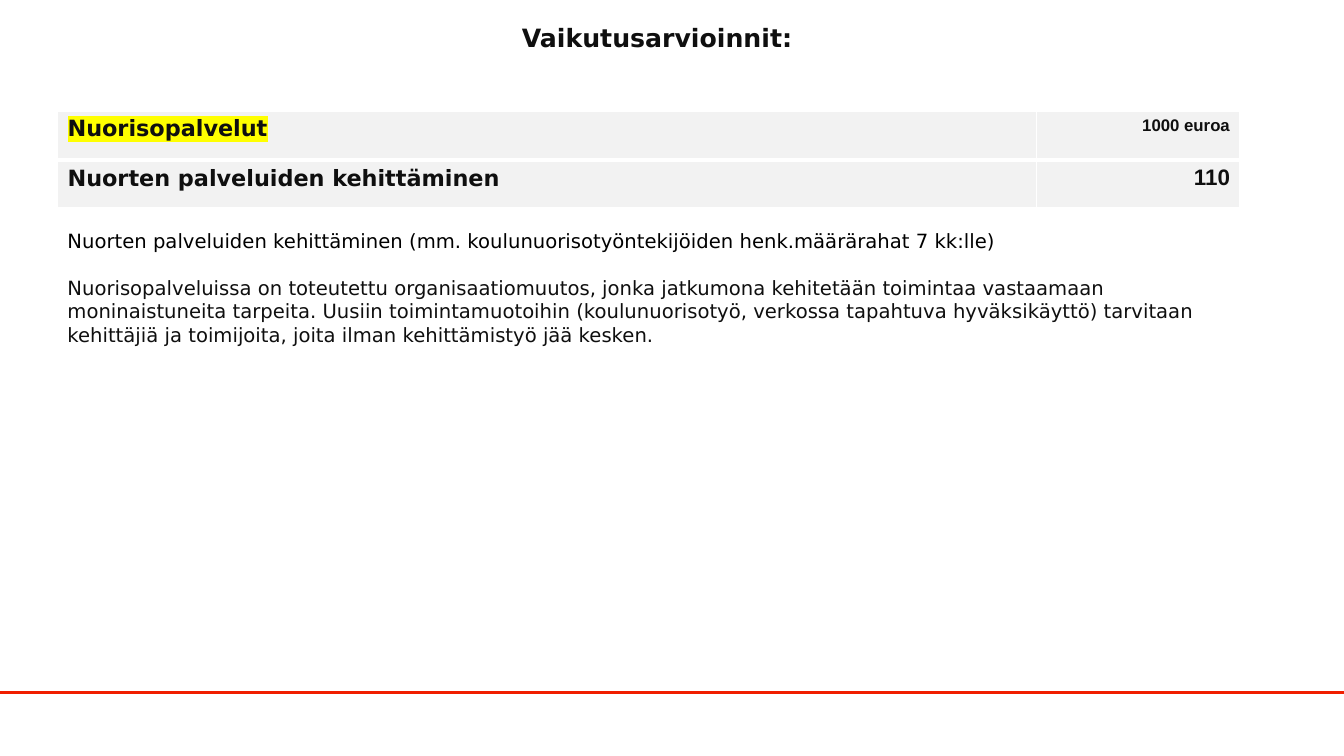
from dataclasses import dataclass
from lxml.etree import SubElement
from pptx import Presentation
from pptx.dml.color import RGBColor
from pptx.enum.shapes import MSO_CONNECTOR
from pptx.enum.text import MSO_ANCHOR, MSO_AUTO_SIZE, PP_ALIGN
from pptx.oxml import parse_xml
from pptx.oxml.ns import nsdecls, qn
from pptx.util import Cm, Pt

TITLE = "Vaikutusarvioinnit:"
ROWS = [
    (("Nuorisopalvelut", {"mark": True}), ("1000 euroa", {"size": 12})),
    (("Nuorten palveluiden kehittäminen", {}), ("110", {})),
]
NOTES = [
    ("Nuorten palveluiden kehittäminen (mm. koulunuorisotyöntekijöiden "
     "henk.määrärahat 7 kk:lle)", "000000"),
    ("Nuorisopalveluissa on toteutettu organisaatiomuutos, jonka jatkumona "
     "kehitetään toimintaa vastaamaan moninaistuneita tarpeita. Uusiin "
     "toimintamuotoihin (koulunuorisotyö, verkossa tapahtuva hyväksikäyttö) "
     "tarvitaan kehittäjiä ja toimijoita, joita ilman kehittämistyö jää kesken.",
     "0F0F0F"),
]


@dataclass(frozen=True)
class Theme:
    ink: str = "0F0F0F"
    fill: str = "F2F2F2"
    edge: str = "FFFFFF"
    mark: str = "FFFF00"
    rule: str = "F01E00"
    sans: str = "DejaVu Sans"
    num: str = "Arial"
    head: int = 18
    cell: int = 16
    body: int = 14


LOOK = Theme()
LEFT, WIDTH = 1.45, 29.8
COLS = (24.67, 5.13)
HIGHS = (1.24, 1.18)
EDGES = [dict(L=1, R=1, T=1, B=3), dict(L=1, R=1, T=3, B=1)]


def write(para, text, size=LOOK.body, font=LOOK.sans, color=LOOK.ink,
          bold=False, align=PP_ALIGN.LEFT, mark=False, after=0):
    para.alignment = align
    para.space_before, para.space_after = Pt(0), Pt(after)
    run = para.add_run()
    run.text = text
    run.font.size, run.font.bold = Pt(size), bold
    run.font.color.rgb = RGBColor.from_string(color)
    if mark:
        light = SubElement(run.font._element, qn("a:highlight"))
        SubElement(light, qn("a:srgbClr"), val=LOOK.mark)
    run.font.name = font


def border(cell, edges):
    props = cell._tc.get_or_add_tcPr()
    for spot, (side, wide) in enumerate(edges.items()):
        props.insert(spot, parse_xml(
            f'<a:ln{side} {nsdecls("a")} w="{Pt(wide)}"><a:solidFill>'
            f'<a:srgbClr val="{LOOK.edge}"/></a:solidFill></a:ln{side}>'))


def add_rule(slide):
    rule = slide.shapes.add_connector(
        MSO_CONNECTOR.STRAIGHT, Cm(0), Cm(17.45), Cm(33.87), Cm(17.45))
    rule.line.color.rgb = RGBColor.from_string(LOOK.rule)
    rule.line.width = Pt(2)
    SubElement(rule._element.spPr, qn("a:effectLst"))


def add_title(slide):
    title = slide.shapes.title
    title.left, title.top = Cm(0), Cm(0.36)
    title.width, title.height = Cm(33.12), Cm(1.17)
    frame = title.text_frame
    frame.auto_size = MSO_AUTO_SIZE.NONE
    frame.vertical_anchor = MSO_ANCHOR.MIDDLE
    write(frame.paragraphs[0], TITLE, size=LOOK.head, bold=True,
          align=PP_ALIGN.CENTER)


def add_costs(slide):
    table = slide.shapes.add_table(
        len(ROWS), len(COLS), Cm(LEFT), Cm(2.8), Cm(WIDTH), Cm(sum(HIGHS))).table
    for col, wide in zip(table.columns, COLS):
        col.width = Cm(wide)
    for row, high, items, edges in zip(table.rows, HIGHS, ROWS, EDGES):
        row.height = Cm(high)
        fonts = (LOOK.sans, LOOK.num)
        sides = (PP_ALIGN.LEFT, PP_ALIGN.RIGHT)
        for cell, (text, form), font, side in zip(row.cells, items, fonts, sides):
            cell.fill.solid()
            cell.fill.fore_color.rgb = RGBColor.from_string(LOOK.fill)
            border(cell, edges)
            write(cell.text_frame.paragraphs[0], text,
                  **{"size": LOOK.cell, "font": font, "bold": True,
                     "align": side, **form})


def add_notes(slide):
    box = slide.shapes.add_textbox(Cm(LEFT), Cm(5.64), Cm(WIDTH), Cm(3.25))
    frame = box.text_frame
    frame.word_wrap = True
    frame.auto_size = MSO_AUTO_SIZE.SHAPE_TO_FIT_TEXT
    for spot, (text, color) in enumerate(NOTES):
        para = frame.add_paragraph() if spot else frame.paragraphs[0]
        write(para, text, color=color, after=0 if spot else 16.8)


def main():
    deck = Presentation()
    deck.slide_width, deck.slide_height = Cm(33.87), Cm(19.05)
    slide = deck.slides.add_slide(deck.slide_layouts[5])
    add_rule(slide)
    add_title(slide)
    add_costs(slide)
    add_notes(slide)
    deck.save("out.pptx")


if __name__ == "__main__":
    main()
